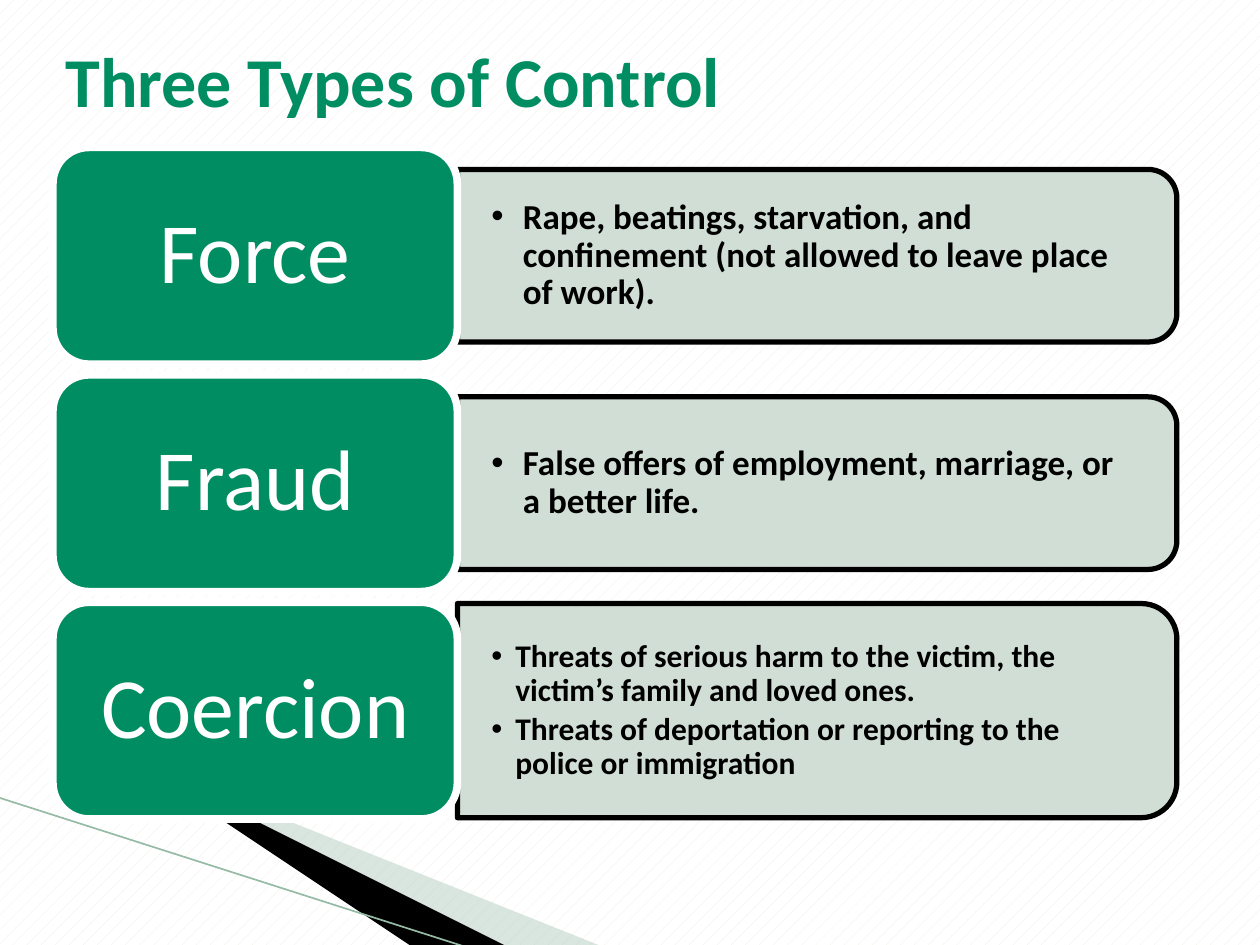
from lxml.etree import SubElement
from pptx import Presentation
from pptx.dml.color import RGBColor
from pptx.enum.dml import MSO_PATTERN
from pptx.enum.shapes import MSO_CONNECTOR, MSO_SHAPE
from pptx.enum.text import MSO_ANCHOR, PP_ALIGN
from pptx.oxml.ns import qn
from pptx.util import Inches, Pt

GREEN = RGBColor(0x00, 0x8D, 0x61)
PALE_GREEN = RGBColor(0xCC, 0xDB, 0xD2)
SOFT_GREEN = RGBColor(0x9F, 0xC2, 0xAF)
LINE_GREEN = RGBColor(0x95, 0xBB, 0xA6)
CREAM = RGBColor(0xEE, 0xEC, 0xE1)
BLACK = RGBColor(0, 0, 0)
WHITE = RGBColor(0xFF, 0xFF, 0xFF)
FONT = "Calibri"

LEFT, LABEL_WIDTH, LABEL_HEIGHT = 0.42, 3.21, 1.72
PANEL_LEFT, PANEL_WIDTH = LEFT + LABEL_WIDTH, 5.71
FIRST_MIDDLE, ROW_PITCH = 2.03, 1.805

# label, panel height, text size, indent, items
ROWS = [
    ("Force", 1.37, 20, 0.25,
     ["Rape, beatings, starvation, and confinement (not allowed to leave place of work)."]),
    ("Fraud", 1.37, 20, 0.25,
     ["False offers of employment, marriage, or a better life."]),
    ("Coercion", 1.7, 18, 0.19,
     ["Threats of serious harm to the victim, the victim’s family and loved ones.",
      "Threats of deportation or reporting to the police or immigration"]),
]


def set_fill(shape, color, opacity=100):
    shape.shadow.inherit = False
    shape.fill.solid()
    shape.fill.fore_color.rgb = color
    if opacity < 100:
        color_element = shape.fill._xPr.find(qn("a:solidFill"))[0]
        SubElement(color_element, qn("a:alpha"), val=str(opacity * 1000))


def set_line(shape, color, width):
    shape.line.color.rgb = color
    shape.line.width = Pt(width)


def set_font(paragraph, size, color, bold=False):
    font = paragraph.font
    font.name, font.size, font.bold = FONT, Pt(size), bold
    font.color.rgb = color


def set_insets(frame, horizontal, vertical):
    frame.margin_left = frame.margin_right = Inches(horizontal)
    frame.margin_top = frame.margin_bottom = Inches(vertical)


def add_wedge(slide, points, color, opacity=100):
    start, *others = points
    builder = slide.shapes.build_freeform(*start, scale=Inches(1))
    builder.add_line_segments(others)
    wedge = builder.convert_to_shape()
    set_fill(wedge, color, opacity)
    wedge.line.fill.background()


def add_corner_decoration(slide):
    add_wedge(slide, [(0.55, 6.5), (5.95, 7.51), (4.56, 7.51)], SOFT_GREEN, 40)
    add_wedge(slide, [(0.53, 6.49), (4.57, 7.51), (3.72, 7.52)], BLACK)
    edge = slide.shapes.add_connector(
        MSO_CONNECTOR.STRAIGHT, Inches(-0.01), Inches(6.33), Inches(3.71), Inches(7.52))
    set_line(edge, LINE_GREEN, 0.95)
    SubElement(edge._element.spPr, qn("a:effectLst"))


def add_panel(slide, middle, height):
    """Add a panel rounded on its right side: a round-topped shape turned by 90°."""
    center = PANEL_LEFT + PANEL_WIDTH / 2
    panel = slide.shapes.add_shape(
        MSO_SHAPE.ROUND_2_SAME_RECTANGLE,
        Inches(center - height / 2), Inches(middle - PANEL_WIDTH / 2),
        Inches(height), Inches(PANEL_WIDTH))
    panel.rotation = 90
    set_fill(panel, PALE_GREEN, 90)
    set_line(panel, BLACK, 3)


def add_bullets(slide, middle, height, size, indent, items):
    box = slide.shapes.add_textbox(
        Inches(PANEL_LEFT), Inches(middle - height / 2),
        Inches(PANEL_WIDTH - 0.08), Inches(height))
    frame = box.text_frame
    frame.word_wrap = True
    frame.vertical_anchor = MSO_ANCHOR.MIDDLE
    set_insets(frame, 0.27, 0.14)
    frame.text = "\n".join(items)
    for paragraph in frame.paragraphs:
        properties = paragraph._p.get_or_add_pPr()
        properties.set("marL", str(Inches(indent)))
        properties.set("indent", str(-Inches(indent)))
        paragraph.line_spacing = 0.9
        paragraph.space_after = Pt(size * 0.15)
        SubElement(properties, qn("a:buFont"), typeface="Arial")
        SubElement(properties, qn("a:buChar"), char="•")
        set_font(paragraph, size, BLACK, bold=True)


def add_label(slide, middle, text):
    label = slide.shapes.add_shape(
        MSO_SHAPE.ROUNDED_RECTANGLE, Inches(LEFT), Inches(middle - LABEL_HEIGHT / 2),
        Inches(LABEL_WIDTH), Inches(LABEL_HEIGHT))
    set_fill(label, GREEN)
    set_line(label, WHITE, 4.33)
    frame = label.text_frame
    frame.word_wrap = True
    frame.vertical_anchor = MSO_ANCHOR.MIDDLE
    set_insets(frame, 0.2, 0.1)
    frame.text = text
    paragraph = frame.paragraphs[0]
    paragraph.alignment = PP_ALIGN.CENTER
    paragraph.line_spacing = 0.9
    paragraph.space_after = Pt(49 * 0.35)
    set_font(paragraph, 49, WHITE)


def set_title(slide, text):
    title = slide.shapes.title
    title.left, title.top = Inches(LEFT), Inches(0.25)
    title.width, title.height = Inches(10 - LEFT), Inches(0.92)
    frame = title.text_frame
    frame.text = text
    frame.vertical_anchor = MSO_ANCHOR.TOP
    paragraph = frame.paragraphs[0]
    paragraph.alignment = PP_ALIGN.LEFT
    set_font(paragraph, 40, GREEN, bold=True)


def set_background(slide):
    fill = slide.background.fill
    fill.patterned()
    fill.pattern = MSO_PATTERN.PERCENT_10
    fill.fore_color.rgb = CREAM
    fill.back_color.rgb = WHITE


def main():
    presentation = Presentation()
    presentation.slide_width, presentation.slide_height = Inches(10), Inches(7.5)
    slide = presentation.slides.add_slide(presentation.slide_layouts.get_by_name("Title Only"))
    set_background(slide)
    set_title(slide, "Three Types of Control")
    add_corner_decoration(slide)
    for row, (label, height, size, indent, items) in enumerate(ROWS):
        middle = FIRST_MIDDLE + row * ROW_PITCH
        add_panel(slide, middle, height)
        add_bullets(slide, middle, height, size, indent, items)
        add_label(slide, middle, label)
    presentation.save("out.pptx")


if __name__ == "__main__":
    main()
